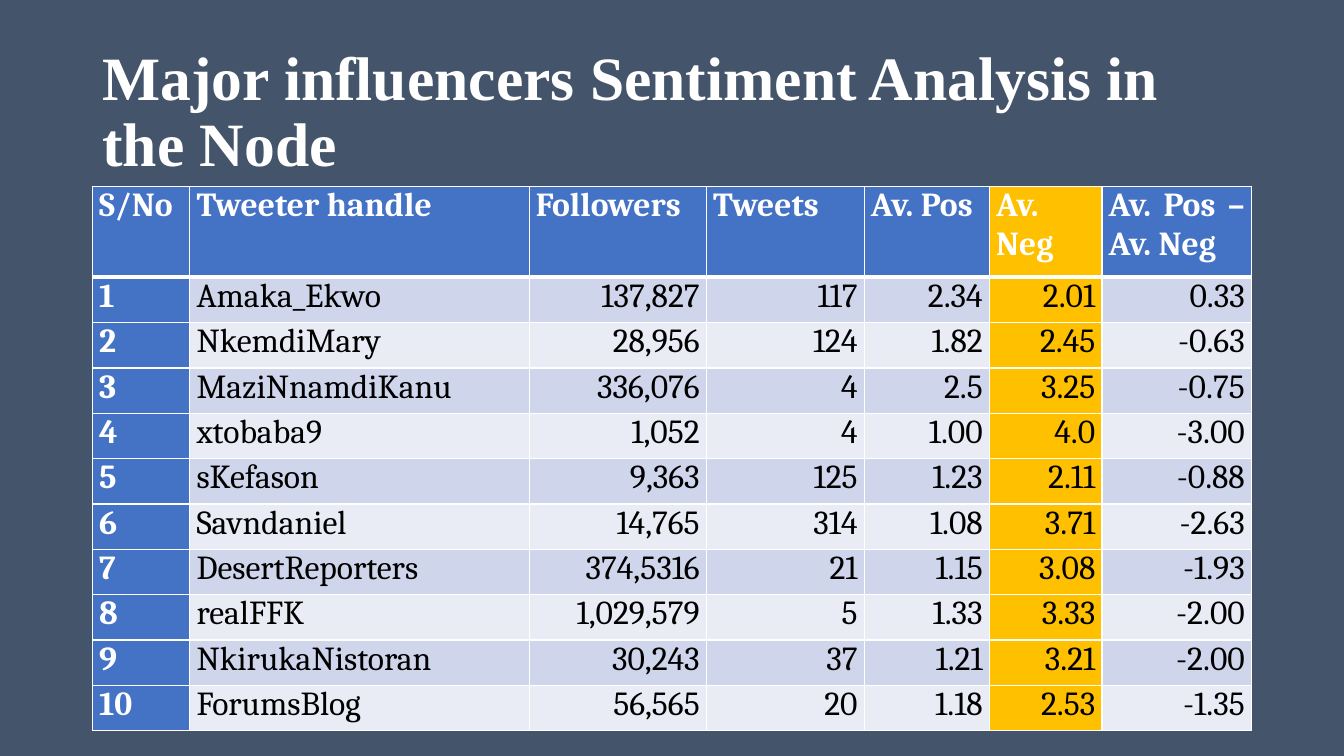
from lxml.etree import SubElement
from pptx import Presentation
from pptx.dml.color import RGBColor as RGB
from pptx.enum.text import MSO_ANCHOR as ANCHOR, PP_ALIGN as ALIGN
from pptx.oxml.ns import qn
from pptx.util import Pt

PX = 7620
COLORS = {
    "background": "44546A",
    "white": "FFFFFF",
    "black": "000000",
    "header": "4472C4",
    "negative": "FFC000",
    "odd": "CFD5EA",
    "even": "E9EBF5",
}
HEADERS = ["S/No", "Tweeter handle", "Followers", "Tweets", "Av. Pos", "Av. Neg", "Av. Pos – Av. Neg"]
INFLUENCERS = [
    ["Amaka_Ekwo", "137,827", "117", "2.34", "2.01", "0.33"],
    ["NkemdiMary", "28,956", "124", "1.82", "2.45", "-0.63"],
    ["MaziNnamdiKanu", "336,076", "4", "2.5", "3.25", "-0.75"],
    ["xtobaba9", "1,052", "4", "1.00", "4.0", "-3.00"],
    ["sKefason", "9,363", "125", "1.23", "2.11", "-0.88"],
    ["Savndaniel", "14,765", "314", "1.08", "3.71", "-2.63"],
    ["DesertReporters", "374,5316", "21", "1.15", "3.08", "-1.93"],
    ["realFFK", "1,029,579", "5", "1.33", "3.33", "-2.00"],
    ["NkirukaNistoran", "30,243", "37", "1.21", "3.21", "-2.00"],
    ["ForumsBlog", "56,565", "20", "1.18", "2.53", "-1.35"],
]
COL_WIDTHS = [116, 404, 211, 188, 149, 134, 178]
HEADER_HEIGHT, ROW_HEIGHT = 108, 54
NEGATIVE_COL = HEADERS.index("Av. Neg")


def color(name):
    """Return the named colour."""
    return RGB.from_string(COLORS[name])


def add_run(p, text, font, size, fill, bold):
    """Add one formatted run to a paragraph."""
    r = p.add_run()
    r.text = text
    r.font.name = font
    r.font.size = Pt(size)
    r.font.bold = bold
    r.font.color.rgb = color(fill)


def add_title(slide, x, y, w, h):
    """Place the slide title in the given box."""
    tf = slide.shapes.add_textbox(x * PX, y * PX, w * PX, h * PX).text_frame
    tf.word_wrap = True
    tf.vertical_anchor = ANCHOR.MIDDLE
    p = tf.paragraphs[0]
    p.line_spacing = 0.9
    add_run(p, "Major influencers Sentiment Analysis in the Node", "Times New Roman", 44, "white", True)


def add_borders(cell, widths):
    """Draw white cell borders with the given widths in points."""
    tc_pr = cell._tc.get_or_add_tcPr()
    for side, width in widths.items():
        ln = SubElement(tc_pr, qn(f"a:ln{side}"), w=str(Pt(width)))
        solid = SubElement(ln, qn("a:solidFill"))
        SubElement(solid, qn("a:srgbClr"), val=COLORS["white"])


def fill_cell(cell, text, row, col):
    """Write and style a cell according to its row and column."""
    cell.margin_left = cell.margin_right = 8 * PX
    cell.margin_top = cell.margin_bottom = 0
    add_borders(cell, {"L": 1, "R": 1, "T": 3 if row == 1 else 1, "B": 3 if row == 0 else 1})
    heading = row == 0 or col == 0
    if col == NEGATIVE_COL:
        fill = "negative"
    elif heading:
        fill = "header"
    else:
        fill = "odd" if row % 2 else "even"
    cell.fill.solid()
    cell.fill.fore_color.rgb = color(fill)
    p = cell.text_frame.paragraphs[0]
    p.alignment = ALIGN.JUSTIFY if row == 0 or col < 2 else ALIGN.RIGHT
    add_run(p, text, "Cambria", 24, "white" if heading else "black", heading)


def add_influencer_table(slide, x, y, w, h):
    """Place the influencer sentiment table in the given box."""
    rows = [HEADERS] + [[str(n), *values] for n, values in enumerate(INFLUENCERS, 1)]
    table = slide.shapes.add_table(len(rows), len(HEADERS), x * PX, y * PX, w * PX, h * PX).table
    for column, width in zip(table.columns, COL_WIDTHS):
        column.width = width * PX
    for i, values in enumerate(rows):
        table.rows[i].height = (ROW_HEIGHT if i else HEADER_HEIGHT) * PX
        for j, text in enumerate(values):
            fill_cell(table.cell(i, j), text, i, j)


def main():
    """Build and save the slide."""
    prs = Presentation()
    prs.slide_width, prs.slide_height = 1600 * PX, 900 * PX
    slide = prs.slides.add_slide(prs.slide_layouts[6])
    slide.background.fill.solid()
    slide.background.fill.fore_color.rgb = color("background")
    add_title(slide, 110, 48, 1380, 174)
    add_influencer_table(slide, 110, 222, sum(COL_WIDTHS), HEADER_HEIGHT + ROW_HEIGHT * len(INFLUENCERS))
    prs.save("out.pptx")


if __name__ == "__main__":
    main()
